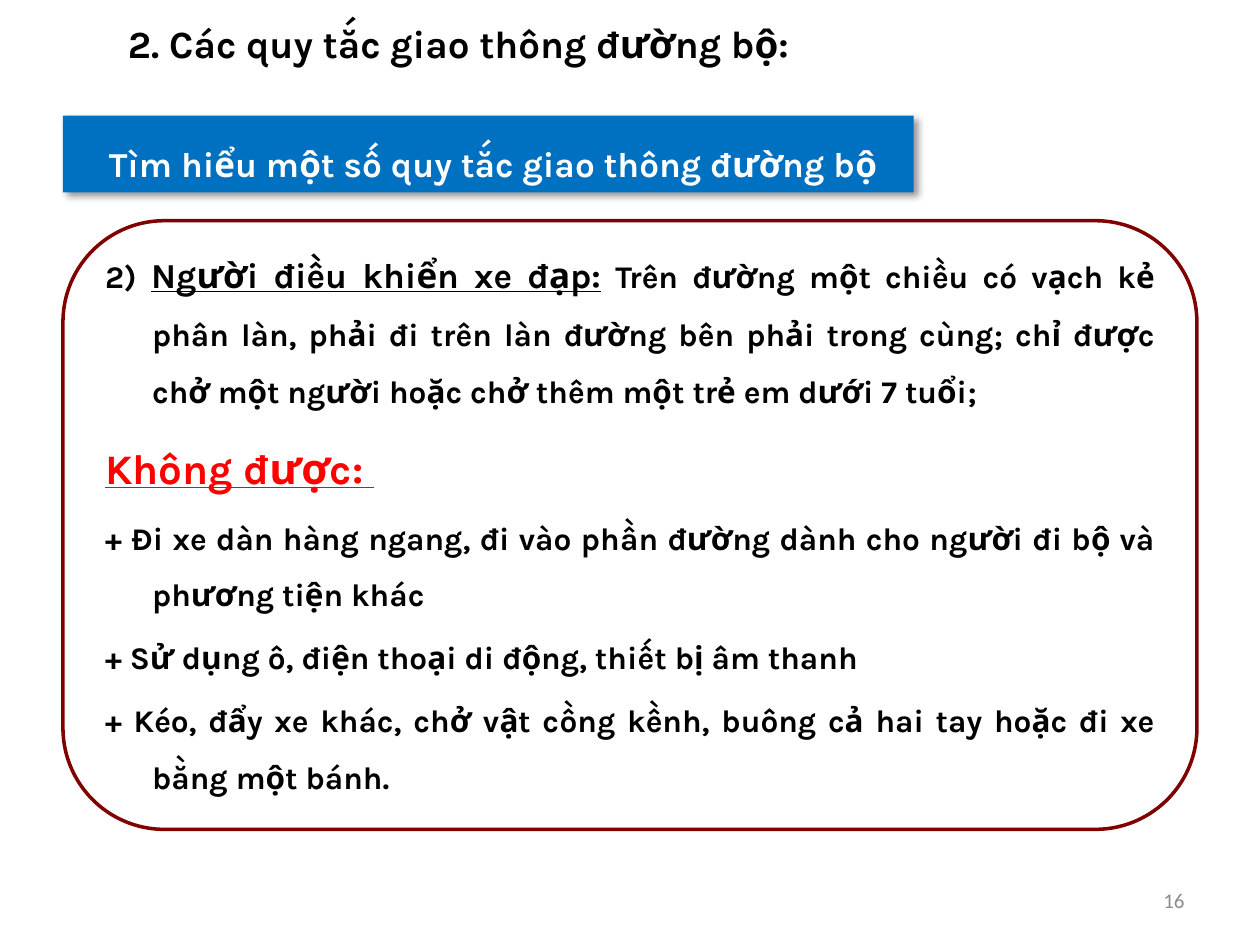
from pptx import Presentation
from pptx.util import Cm, Pt
from pptx.dml.color import RGBColor
from pptx.enum.shapes import MSO_SHAPE as Geo
from pptx.enum.text import MSO_ANCHOR as Anchor, PP_ALIGN as Align
from lxml.etree import fromstring

NS = "http://schemas.openxmlformats.org/drawingml/2006/main"
SHADE = (f'<a:effectLst xmlns:a="{NS}"><a:outerShdw blurRad="50800" dist="38100" '
         'dir="2700000" algn="tl" rotWithShape="0"><a:srgbClr val="000000">'
         '<a:alpha val="40000"/></a:srgbClr></a:outerShdw></a:effectLst>')


def hue(code):
    return RGBColor.from_string(code)


class Deck:
    """Holds the style and the current slide, and draws each kind of element."""

    font, ink, alert = "Karla", "000000", "FF0000"
    blue, maroon, gray = "0070C0", "800000", "8C8C8C"

    def __init__(self, wide, high):
        self.file = Presentation()
        self.file.slide_width, self.file.slide_height = Cm(wide), Cm(high)
        self.slide = self.file.slides.add_slide(self.file.slide_layouts[6])

    def style(self, run, size, color=ink, bold=True, line=False, font=font):
        run.font.name, run.font.size = font, Pt(size)
        run.font.bold, run.font.underline = bold, line
        run.font.color.rgb = hue(color)

    def label(self, box, text, size, align=Align.LEFT, **look):
        shape = self.slide.shapes.add_textbox(*map(Cm, box))
        frame = shape.text_frame
        frame.word_wrap, frame.vertical_anchor = True, Anchor.MIDDLE
        frame.text = text
        frame.paragraphs[0].alignment = align
        self.style(frame.paragraphs[0].runs[0], size, **look)

    def shape(self, geo, box, fill=None, line=None):
        shape = self.slide.shapes.add_shape(geo, *map(Cm, box))
        shape.shadow.inherit = False
        if fill:
            shape.fill.solid()
            shape.fill.fore_color.rgb = hue(fill)
        else:
            shape.fill.background()
        if line:
            shape.line.color.rgb, shape.line.width = hue(line), Pt(2)
        else:
            shape.line.fill.background()
        return shape

    def banner(self, box, text):
        shape = self.shape(Geo.RECTANGLE, box, fill=self.blue)
        props = shape.element.spPr
        props.replace(props.find(f"{{{NS}}}effectLst"), fromstring(SHADE))
        frame = shape.text_frame
        frame.vertical_anchor = Anchor.TOP
        frame.text = text
        par = frame.paragraphs[0]
        par.alignment, par.line_spacing = Align.CENTER, 1.5
        self.style(par.runs[0], 20, "FFFFFF")

    def panel(self, box, rules):
        frame = self.shape(Geo.ROUNDED_RECTANGLE, box, line=self.maroon).text_frame
        frame.vertical_anchor, frame.word_wrap = Anchor.MIDDLE, True
        frame.margin_top, frame.margin_bottom = Cm(0), Cm(0.43)
        for i, parts in enumerate(rules):
            par = frame.add_paragraph() if i else frame.paragraphs[0]
            par.alignment, par.line_spacing = Align.JUSTIFY, 1.5
            par.space_before = Pt(0.2 * parts[0][1])
            props = par._p.get_or_add_pPr()
            props.set("marL", str(Cm(0.95)))
            props.set("indent", str(-Cm(0.95)))
            for text, size, color, line in parts:
                run = par.add_run()
                run.text = text
                self.style(run, size, color, line=line)


def main():
    deck = Deck(25.4, 19.05)
    ink = deck.ink
    bans = [
        "+ Đi xe dàn hàng ngang, đi vào phần đường dành cho người đi bộ và phương tiện khác",
        "+ Sử dụng ô, điện thoại di động, thiết bị âm thanh",
        "+ Kéo, đẩy xe khác, chở vật cồng kềnh, buông cả hai tay hoặc đi xe bằng một bánh.",
    ]
    rules = [
        [("2) ", 18, ink, False),
         ("Người điều khiển xe đạp:", 20, ink, True),
         (" Trên đường một chiều có vạch kẻ phân làn, phải đi trên làn đường bên phải "
          "trong cùng; chỉ được chở một người hoặc chở thêm một trẻ em dưới 7 tuổi;",
          18, ink, False)],
        [("Không được: ", 24, deck.alert, True)],
        *[[(ban, 18, ink, False)] for ban in bans],
    ]
    deck.label((18.2, 17.65, 5.93, 1.01), "16", 12, Align.RIGHT,
               color=deck.gray, bold=False, font="Calibri")
    deck.panel((1.27, 4.45, 22.86, 12.27), rules)
    deck.banner((1.27, 2.33, 17.15, 1.55), " Tìm hiểu một số quy tắc giao thông đường bộ")
    deck.label((2.33, 0.34, 22.65, 1.06), "2. Các quy tắc giao thông đường bộ:", 22)
    deck.file.save("out.pptx")


if __name__ == "__main__":
    main()
